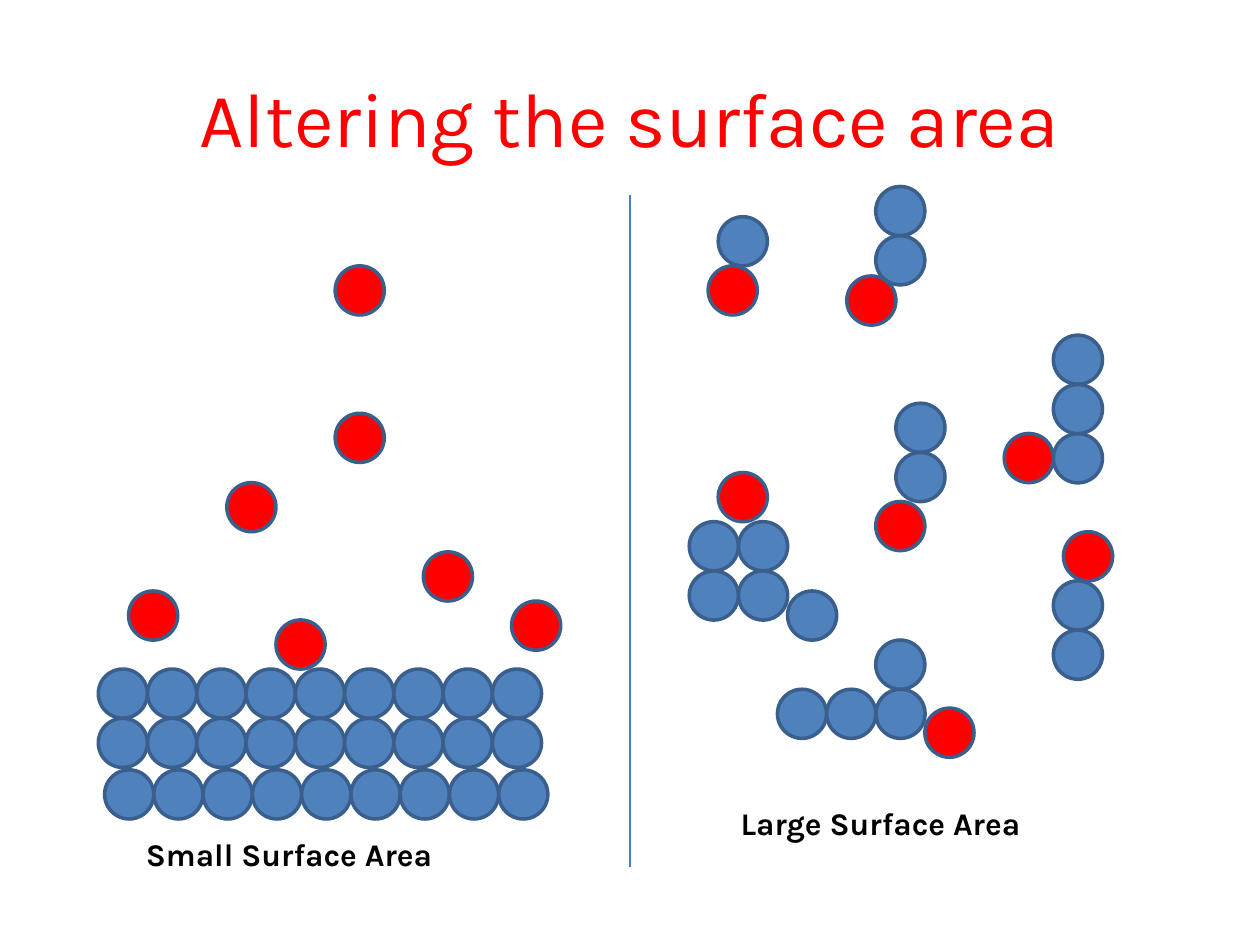
import pptx
import pptx.dml.color
import pptx.enum.shapes
import pptx.enum.text
import pptx.oxml.ns
import pptx.util
from lxml import etree

Inches = pptx.util.Inches
Pt = pptx.util.Pt
ALIGN = pptx.enum.text.PP_ALIGN
ANCHOR = pptx.enum.text.MSO_ANCHOR

COLORS = {"solid": "4F81BD", "reactant": "FF0000", "outline": "3A5F8C",
          "divider": "4B7EBC", "title": "FF0000", "label": "000000"}
FONT = "Karla"
SIZE = 0.39
PITCH = 0.391

FREE_REACTANTS = [(2.19, 4.92), (4.06, 4.77), (2.66, 2.11), (1.8, 3.83),
                  (2.66, 3.28), (1.02, 4.69), (3.36, 4.38)]
# left, top, columns, rows
CLUSTERS = [(5.7, 1.72, 1, 1), (8.36, 2.66, 1, 3), (8.36, 4.61, 1, 2),
            (7.11, 3.2, 1, 2), (6.95, 1.48, 1, 2), (6.25, 4.69, 1, 1),
            (5.47, 4.14, 2, 2), (6.95, 5.08, 1, 1), (6.17, 5.47, 3, 1)]
BOUND_REACTANTS = [(5.62, 2.11), (6.72, 2.19), (5.7, 3.75), (7.34, 5.62),
                   (8.44, 4.22), (6.95, 3.98), (7.97, 3.44)]


class Deck:
    """Hold the style and the current slide, and draw each kind of element."""

    def __init__(self, prs):
        self.s = prs.slides.add_slide(prs.slide_layouts[6])

    def color(self, name):
        return pptx.dml.color.RGBColor.from_string(COLORS[name])

    def text(self, text, left, top, width, height, size, color, bold=False,
             align=ALIGN.LEFT, anchor=ANCHOR.TOP):
        sp = self.s.shapes.add_textbox(Inches(left), Inches(top), Inches(width), Inches(height))
        tf = sp.text_frame
        tf.word_wrap = True
        tf.vertical_anchor = anchor
        p = tf.paragraphs[0]
        p.alignment = align
        r = p.add_run()
        r.text = text
        r.font.name = FONT
        r.font.size = Pt(size)
        r.font.bold = bold
        r.font.color.rgb = self.color(color)

    def particle(self, left, top, color):
        sp = self.s.shapes.add_shape(pptx.enum.shapes.MSO_SHAPE.OVAL, Inches(left),
                                     Inches(top), Inches(SIZE), Inches(SIZE))
        sp.shadow.inherit = False
        sp.fill.solid()
        sp.fill.fore_color.rgb = self.color(color)
        sp.line.color.rgb = self.color("outline")
        sp.line.width = Pt(2)

    def cluster(self, left, top, columns, rows):
        for row in range(rows):
            for column in range(columns):
                self.particle(left + column * PITCH, top + row * PITCH, "solid")

    def reactants(self, places):
        for left, top in places:
            self.particle(left, top, "reactant")

    def divider(self, x, top, bottom):
        line = self.s.shapes.add_connector(pptx.enum.shapes.MSO_CONNECTOR.STRAIGHT,
                                           Inches(x), Inches(top), Inches(x), Inches(bottom))
        line.line.color.rgb = self.color("divider")
        line.line.width = Pt(0.75)
        etree.SubElement(line._element.spPr, pptx.oxml.ns.qn("a:effectLst"))


def main():
    prs = pptx.Presentation()
    prs.slide_width, prs.slide_height = Inches(10), Inches(7.5)
    deck = Deck(prs)
    deck.text("Altering the surface area", 0.5, 0.3, 9, 1.25, 44, "title",
              align=ALIGN.CENTER, anchor=ANCHOR.MIDDLE)
    deck.cluster(0.78, 5.31, 9, 2)
    deck.reactants(FREE_REACTANTS)
    deck.divider(5, 1.55, 6.88)
    deck.text("Small Surface Area", 1.06, 6.58, 3.2, 0.51, 18, "label", bold=True)
    for cluster in CLUSTERS:
        deck.cluster(*cluster)
    deck.reactants(BOUND_REACTANTS)
    deck.text("Large Surface Area", 5.78, 6.33, 3.2, 0.51, 18, "label", bold=True)
    deck.cluster(0.83, 6.11, 9, 1)
    prs.save("out.pptx")


if __name__ == "__main__":
    main()
